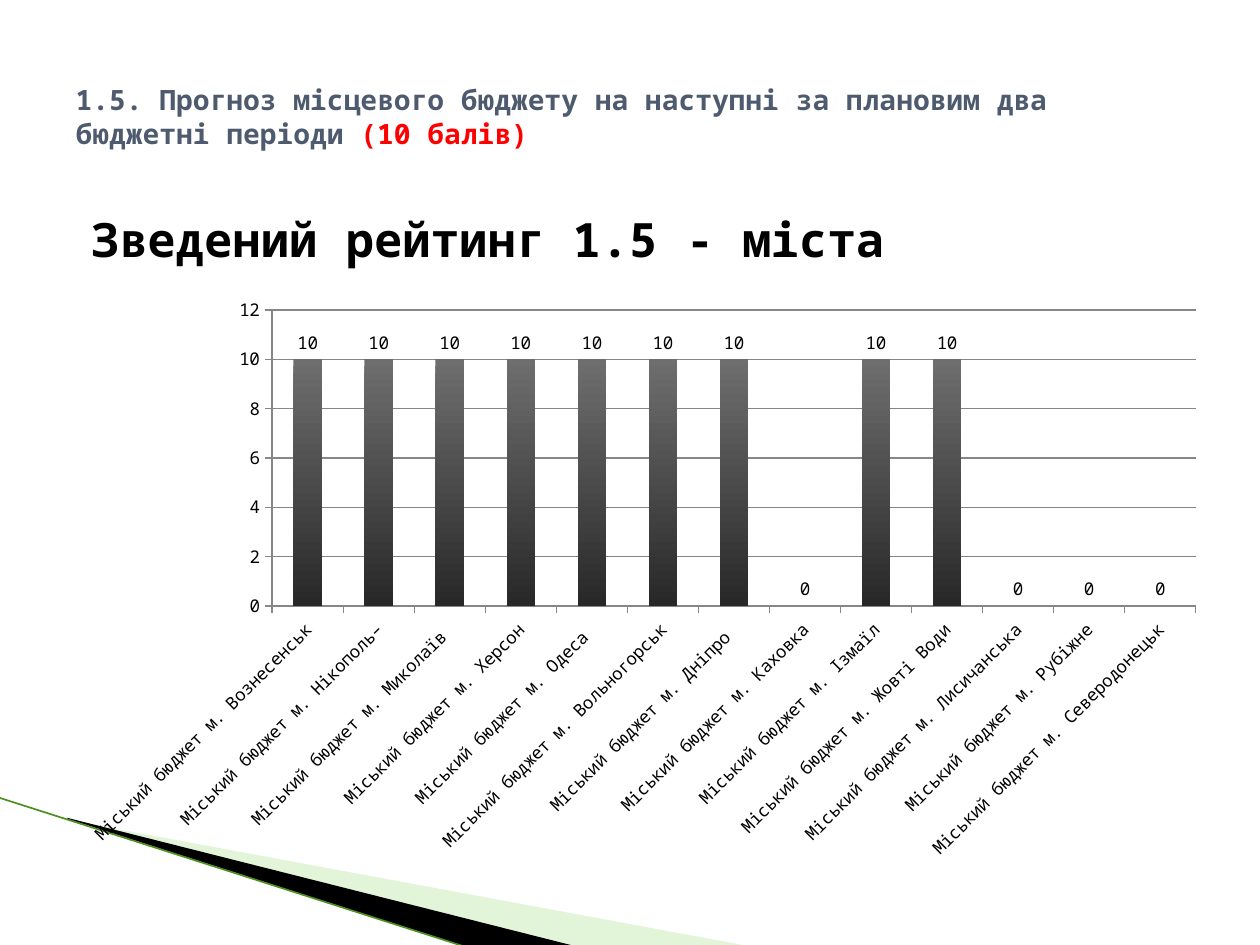
"""Build the slide with the 1.5 city budget forecast rating."""
from dataclasses import dataclass

from lxml import etree
from pptx import Presentation
from pptx.chart import data as chart_data
from pptx.dml.color import RGBColor
from pptx.enum import chart as chart_enum
from pptx.enum import shapes, text
from pptx.oxml import ns
from pptx.util import Inches, Pt

FONT = "Noto Sans Mono"
BLACK, GREY = "000000", "868686"
CHART_WIDTH, CHART_HEIGHT = 9.14, 4.77
CITIES = [
    "Вознесенськ", "Нікополь–", "Миколаїв ", "Херсон", "Одеса ",
    "Вольногорськ", "Дніпро ", "Каховка", "Ізмаїл", "Жовті Води",
    "Лисичанська", "Рубіжне", "Северодонецьк",
]
SCORES = [10] * 7 + [0] + [10] * 2 + [0] * 3


@dataclass
class Wedge:
    """A corner polygon with its frame and points in inches and opacity in percent."""
    frame: tuple[float, float, float, float]
    points: list[tuple[float, float]]
    color: str
    opacity: int = 100


WEDGES = [
    Wedge((0.78, 5.47, 4.16, 1.58),
          [(0.55, 6.51), (5.95, 7.51), (4.56, 7.51), (0.55, 6.5)], "B8E7A1", 40),
    Wedge((-0.06, 6.33, 4.16, 0.92),
          [(0.53, 6.49), (4.57, 7.51), (3.72, 7.52), (0.54, 6.5)], BLACK),
]


def rgb(value: str) -> RGBColor:
    """Turn a hex string into a colour."""
    return RGBColor.from_string(value)


def style_font(font, size: float, bold: bool = False, color: str = BLACK) -> None:
    """Apply the slide typeface with a size, weight and colour."""
    font.name, font.size, font.bold = FONT, Pt(size), bold
    font.color.rgb = rgb(color)


def place(shape, left: float, top: float, width: float, height: float) -> None:
    """Move and size a shape in inches."""
    shape.left, shape.top = Inches(left), Inches(top)
    shape.width, shape.height = Inches(width), Inches(height)


def set_frame(shape, frame: tuple[float, float, float, float]) -> None:
    """Give a freeform a new frame while its outline stays in place."""
    old_left, old_top = shape.left, shape.top
    place(shape, *frame)
    outline = shape._element.spPr.find(".//" + ns.qn("a:path"))
    outline.set("w", str(shape.width))
    outline.set("h", str(shape.height))
    for point in outline.iter(ns.qn("a:pt")):
        point.set("x", str(int(point.get("x")) + old_left - shape.left))
        point.set("y", str(int(point.get("y")) + old_top - shape.top))


def draw_wedge(page, wedge: Wedge) -> None:
    """Draw one decorative corner polygon."""
    builder = page.shapes.build_freeform(
        *(Inches(v) for v in wedge.points[0]), scale=1.0)
    builder.add_line_segments([(Inches(x), Inches(y)) for x, y in wedge.points[1:]])
    shape = builder.convert_to_shape()
    set_frame(shape, wedge.frame)
    shape.shadow.inherit = False
    shape.line.fill.background()
    shape.fill.solid()
    shape.fill.fore_color.rgb = rgb(wedge.color)
    if wedge.opacity < 100:
        fill_color = shape._element.spPr.find(".//" + ns.qn("a:srgbClr"))
        alpha = etree.SubElement(fill_color, ns.qn("a:alpha"))
        alpha.set("val", str(wedge.opacity * 1000))


def draw_edge(page) -> None:
    """Draw the thin green line along the corner."""
    edge = page.shapes.add_connector(
        shapes.MSO_CONNECTOR.STRAIGHT,
        Inches(-0.01), Inches(6.33), Inches(3.71), Inches(7.52))
    edge.line.color.rgb = rgb("4E8F1F")
    edge.line.width = Pt(0.95)
    etree.SubElement(edge._element.spPr, ns.qn("a:effectLst"))


def fill_body(body) -> None:
    """Write the rating heading."""
    place(body, 0.5, 1.62, 9, 4.95)
    para = body.text_frame.paragraphs[0]
    para.text = "Зведений рейтинг 1.5 - міста"
    para.space_before = Pt(0)
    props = para._p.get_or_add_pPr()
    props.set("marL", str(Inches(0.4)))
    props.set("indent", str(Inches(-0.28)))
    etree.SubElement(props, ns.qn("a:buNone"))
    style_font(para.font, 27, True)


def fill_title(title) -> None:
    """Write the slide title with the points in red."""
    place(title, 0.5, 0.3, 9, 1.25)
    title.text_frame.vertical_anchor = text.MSO_ANCHOR.MIDDLE
    para = title.text_frame.paragraphs[0]
    para.alignment = text.PP_ALIGN.LEFT
    style_font(para.font, 16, True)
    for words, color in (
        ("1.5. Прогноз місцевого бюджету на наступні за плановим два "
         "бюджетні періоди ", "4E5B6F"),
        ("(10 балів)", "FF0000"),
    ):
        span = para.add_run()
        span.text = words
        span.font.color.rgb = rgb(color)


def set_plot_area(chart, **fractions: float) -> None:
    """Fix the inner plot area as fractions of the chart."""
    plot_area = chart._chartSpace.chart.plotArea
    for old in plot_area.findall(ns.qn("c:layout")):
        plot_area.remove(old)
    layout = etree.Element(ns.qn("c:layout"))
    manual = etree.SubElement(layout, ns.qn("c:manualLayout"))
    settings = {"layoutTarget": "inner", "xMode": "edge", "yMode": "edge", **fractions}
    for name, value in settings.items():
        etree.SubElement(manual, ns.qn("c:" + name)).set("val", str(value))
    plot_area.insert(0, layout)


def draw_chart(page) -> None:
    """Draw the column chart of city scores."""
    scores = chart_data.CategoryChartData()
    scores.categories = ["Міський бюджет м. " + city for city in CITIES]
    scores.add_series("Series 1", SCORES)
    chart = page.shapes.add_chart(
        chart_enum.XL_CHART_TYPE.COLUMN_CLUSTERED, Inches(0.55), Inches(2.26),
        Inches(CHART_WIDTH), Inches(CHART_HEIGHT), scores).chart
    style_font(chart.font, 10)
    chart.has_legend = chart.has_title = False
    set_plot_area(chart, x=1.61 / CHART_WIDTH, y=0.2 / CHART_HEIGHT,
                  w=7.33 / CHART_WIDTH, h=2.35 / CHART_HEIGHT)

    plot = chart.plots[0]
    plot.vary_by_categories = False
    plot.gap_width = 150
    plot.has_data_labels = True
    labels = plot.data_labels
    labels.show_value = True
    labels.position = chart_enum.XL_LABEL_POSITION.OUTSIDE_END
    style_font(labels.font, 10)

    fill = plot.series[0].format.fill
    fill.gradient()
    fill.gradient_angle = 270
    for stop, color in zip(fill.gradient_stops, ("6E6E6E", "282828")):
        stop.color.rgb = rgb(color)

    for axis in (chart.category_axis, chart.value_axis):
        axis.major_tick_mark = chart_enum.XL_TICK_MARK.OUTSIDE
        axis.minor_tick_mark = chart_enum.XL_TICK_MARK.NONE
        axis.format.line.color.rgb = rgb(GREY)
        style_font(axis.tick_labels.font, 10)
    chart.category_axis._element.txPr.bodyPr.set("rot", str(-45 * 60000))
    scale = chart.value_axis
    scale.minimum_scale, scale.maximum_scale, scale.major_unit = 0, 12, 2
    scale.has_major_gridlines = True
    scale.major_gridlines.format.line.color.rgb = rgb(GREY)


def main() -> None:
    """Assemble and save the deck."""
    deck = Presentation()
    deck.slide_width, deck.slide_height = Inches(10), Inches(7.5)
    page = deck.slides.add_slide(deck.slide_layouts[1])
    title, body = page.shapes.title, page.placeholders[1]
    for wedge in WEDGES:
        draw_wedge(page, wedge)
    draw_edge(page)
    fill_body(body)
    fill_title(title)
    for placeholder in (body, title):
        page.shapes._spTree.append(placeholder._element)
    draw_chart(page)
    deck.save("out.pptx")


if __name__ == "__main__":
    main()
